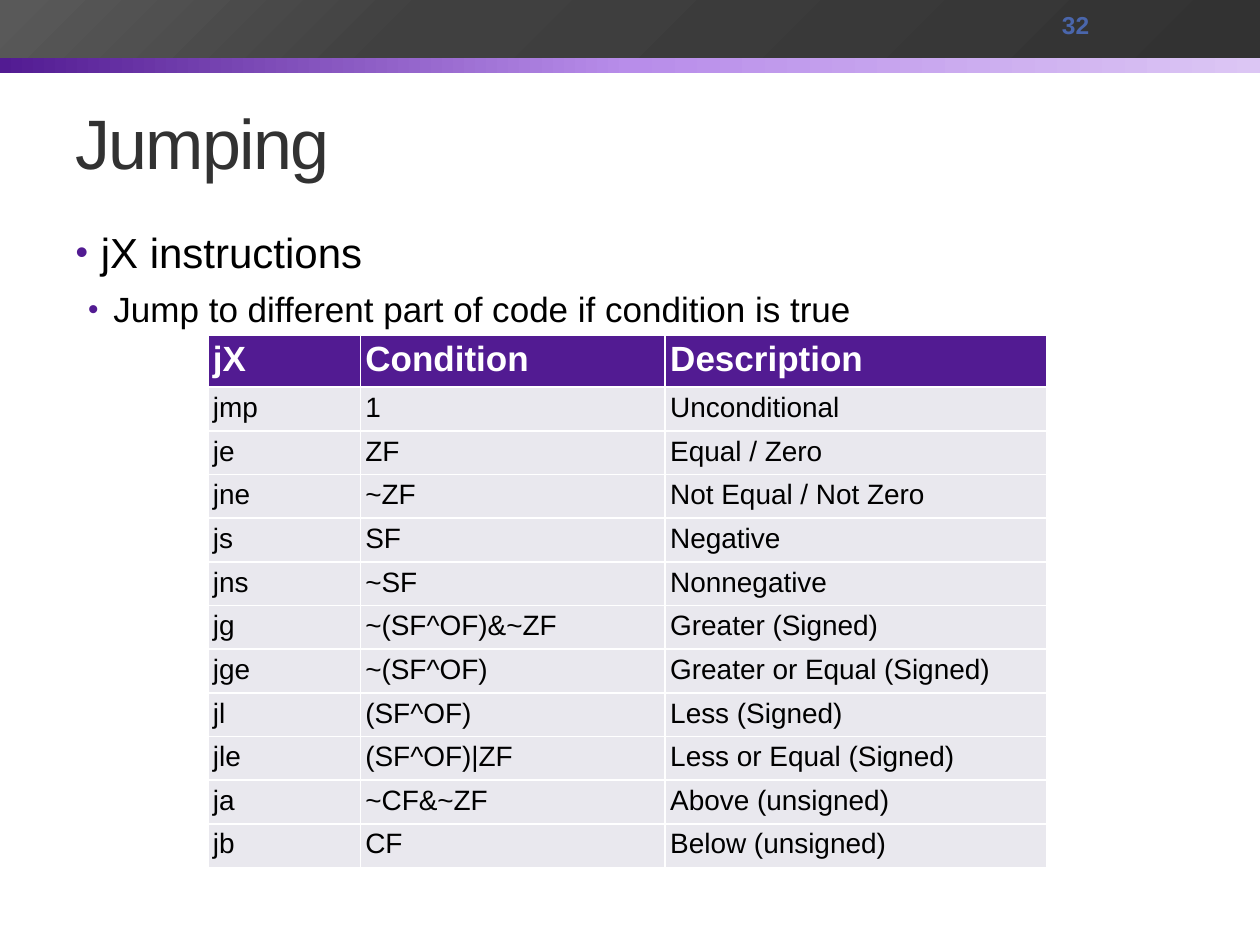
from lxml.etree import SubElement
from pptx import Presentation
from pptx.dml.color import RGBColor
from pptx.enum.shapes import MSO_SHAPE
from pptx.enum.text import MSO_ANCHOR as Anchor, MSO_AUTO_SIZE as AutoSize
from pptx.oxml.ns import qn
from pptx.util import Inches, Pt

PURPLE = RGBColor(0x52, 0x1B, 0x92)
VIOLET = RGBColor(0xB8, 0x8D, 0xEA)
LILAC = RGBColor(0xDC, 0xC6, 0xF4)
CHARCOAL = RGBColor(0x32, 0x32, 0x32)
DARK_GRAY = RGBColor(0x40, 0x40, 0x40)
MID_GRAY = RGBColor(0x59, 0x59, 0x59)
BLUE = RGBColor(0x4A, 0x66, 0xAC)
PALE = RGBColor(0xE9, 0xE8, 0xEE)
WHITE = RGBColor(0xFF, 0xFF, 0xFF)
BLACK = RGBColor(0, 0, 0)

BARS = [
    (0.24, 0.34, 0, [(0, PURPLE), (50, VIOLET), (100, LILAC)]),
    (0, 0.46, 225, [(0, CHARCOAL), (66, DARK_GRAY), (99, MID_GRAY)]),
]
BULLETS = [
    ("jX instructions", 24, 0.2, 4.8),
    ("Jump to different part of code if condition is true", 20, 0.3, 6),
]
JUMPS = [
    ("jX", "Condition", "Description"),
    ("jmp", "1", "Unconditional"),
    ("je", "ZF", "Equal / Zero"),
    ("jne", "~ZF", "Not Equal / Not Zero"),
    ("js", "SF", "Negative"),
    ("jns", "~SF", "Nonnegative"),
    ("jg", "~(SF^OF)&~ZF", "Greater (Signed)"),
    ("jge", "~(SF^OF)", "Greater or Equal (Signed)"),
    ("jl", "(SF^OF)", "Less (Signed)"),
    ("jle", "(SF^OF)|ZF", "Less or Equal (Signed)"),
    ("ja", "~CF&~ZF", "Above (unsigned)"),
    ("jb", "CF", "Below (unsigned)"),
]
COLUMN_WIDTHS = [1.21, 2.42, 3.03]
HEADER_HEIGHT, ROW_HEIGHT = 0.41, 0.34


def set_font(para, size, color, bold=False):
    font = para.font
    font.name, font.size, font.bold = "Arial", Pt(size), bold
    font.color.rgb = color


def place(shape, left, top, width, height):
    shape.left, shape.top = Inches(left), Inches(top)
    shape.width, shape.height = Inches(width), Inches(height)


deck = Presentation()
deck.slide_width, deck.slide_height = Inches(10), Inches(7.5)
page = deck.slides.add_slide(deck.slide_layouts[1])

for top, height, angle, stops in BARS:
    bar = page.shapes.add_shape(MSO_SHAPE.RECTANGLE, 0, Inches(top), deck.slide_width, Inches(height))
    bar.shadow.inherit = False
    bar.line.fill.background()
    bar.fill.gradient()
    gradient = bar.fill._xPr.find(qn("a:gradFill"))
    gradient.find(qn("a:lin")).set("ang", str(angle * 60000))
    stop_list = gradient.find(qn("a:gsLst"))
    stop_list.clear()
    for share, color in stops:
        stop = SubElement(stop_list, qn("a:gs"), pos=str(share * 1000))
        SubElement(stop, qn("a:srgbClr"), val=str(color))

title = page.shapes.title
place(title, 0.5, 0.58, 9, 1.08)
title.text_frame.text = "Jumping"
title.text_frame.vertical_anchor = Anchor.MIDDLE
title.text_frame.auto_size = AutoSize.NONE
para = title.text_frame.paragraphs[0]
para._p.get_or_add_pPr().set("algn", "l")
set_font(para, 40, CHARCOAL)
para.runs[0].font._element.set("spc", "-100")

number_box = page.shapes.add_textbox(0, 0, 0, 0)
place(number_box, 8.33, 0.02, 1.17, 0.36)
number_box.text_frame.word_wrap = True
number_box.text_frame.vertical_anchor = Anchor.MIDDLE
number_box.text_frame.text = "32"
set_font(number_box.text_frame.paragraphs[0], 14, BLUE, True)

body = page.placeholders[1]
place(body, 0.5, 1.75, 9, 5.33)
body.text_frame.text = "\n".join(bullet[0] for bullet in BULLETS)
body.text_frame.auto_size = AutoSize.NONE
for level, (para, bullet) in enumerate(zip(body.text_frame.paragraphs, BULLETS)):
    text, size, indent, gap = bullet
    para.level = level
    para.space_before = Pt(gap)
    props = para._p.get_or_add_pPr()
    props.set("marL", str(Inches(indent)))
    props.set("indent", str(Inches(-0.2)))
    SubElement(SubElement(props, qn("a:buClr")), qn("a:srgbClr"), val=str(PURPLE))
    SubElement(props, qn("a:buSzPct"), val="85000")
    SubElement(props, qn("a:buFont"), typeface="Arial")
    SubElement(props, qn("a:buChar"), char="•")
    set_font(para, size, BLACK)

frame = page.shapes.add_table(len(JUMPS), len(COLUMN_WIDTHS), 0, 0, 0, 0)
place(frame, 1.65, 2.66, sum(COLUMN_WIDTHS), HEADER_HEIGHT + ROW_HEIGHT * (len(JUMPS) - 1))
table = frame.table
for column, width in zip(table.columns, COLUMN_WIDTHS):
    column.width = Inches(width)
for index, (row, texts) in enumerate(zip(table.rows, JUMPS)):
    header = index == 0
    row.height = Inches(HEADER_HEIGHT if header else ROW_HEIGHT)
    for cell, text in zip(row.cells, texts):
        cell.text = text
        cell.margin_left = cell.margin_right = Inches(0.04)
        cell.margin_top = cell.margin_bottom = Inches(0.04)
        cell.fill.solid()
        cell.fill.fore_color.rgb = PURPLE if header else PALE
        set_font(cell.text_frame.paragraphs[0], 20 if header else 16, WHITE if header else BLACK, header)

deck.save("out.pptx")
